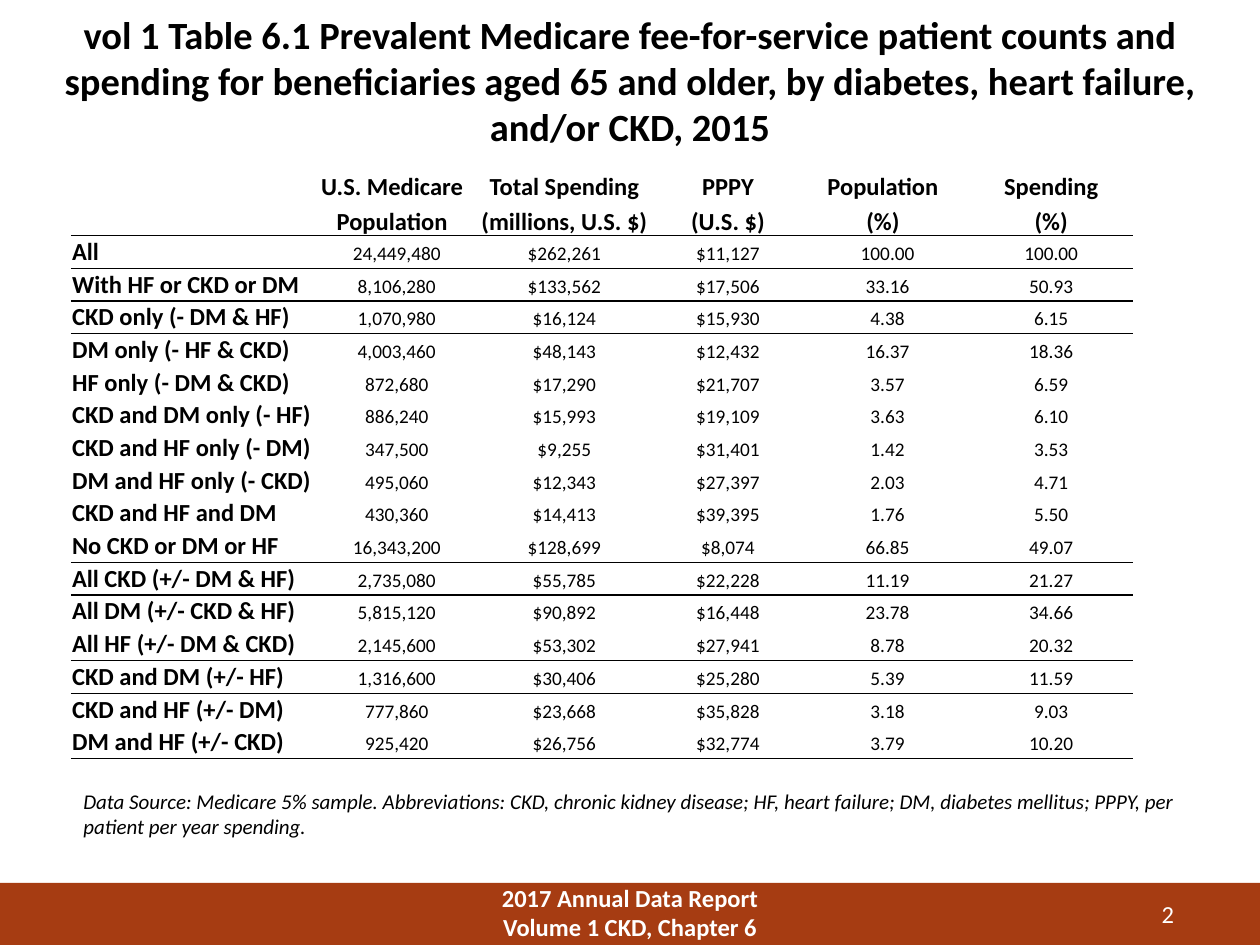
import dataclasses

import lxml.etree
import pptx
import pptx.dml.color
import pptx.enum.shapes
import pptx.enum.text
import pptx.oxml.ns
import pptx.util

Pt = pptx.util.Pt
ALIGN = pptx.enum.text.PP_ALIGN
ANCHOR = pptx.enum.text.MSO_ANCHOR


def rgb(code):
    return pptx.dml.color.RGBColor.from_string(code)


@dataclasses.dataclass(frozen=True)
class Theme:
    font: str = "Calibri"
    ink: str = "000000"
    light: str = "FFFFFF"
    band: str = "A63C12"
    title: float = 22
    label: float = 14
    note: float = 12
    value: float = 11
    rule: float = 1


THEME = Theme()
PLAIN_STYLE = "{2D5ABB26-0587-4C30-8999-92F81FD0307C}"

TITLE = ("vol 1 Table 6.1 Prevalent Medicare fee-for-service patient counts and spending "
         "for beneficiaries aged 65 and older, by diabetes, heart failure, and/or CKD, 2015")
NOTE = ("Data Source: Medicare 5% sample. Abbreviations: CKD, chronic kidney disease; "
        "HF, heart failure; DM, diabetes mellitus; PPPY, per patient per year spending.")
REPORT = ["2017 Annual Data Report", "Volume 1 CKD, Chapter 6"]

HEADINGS = ["", "U.S. Medicare Population", "Total Spending (millions, U.S. $)",
            "PPPY\v(U.S. $)", "Population\v(%)", "Spending\v(%)"]
GROUPS = [
    ("All", "24,449,480", "$262,261", "$11,127", "100.00", "100.00"),
    ("With HF or CKD or DM", "8,106,280", "$133,562", "$17,506", "33.16", "50.93"),
    ("CKD only (- DM & HF)", "1,070,980", "$16,124", "$15,930", "4.38", "6.15"),
    ("DM only (- HF & CKD)", "4,003,460", "$48,143", "$12,432", "16.37", "18.36"),
    ("HF only (- DM & CKD)", "872,680", "$17,290", "$21,707", "3.57", "6.59"),
    ("CKD and DM only (- HF)", "886,240", "$15,993", "$19,109", "3.63", "6.10"),
    ("CKD and HF only (- DM)", "347,500", "$9,255", "$31,401", "1.42", "3.53"),
    ("DM and HF only (- CKD)", "495,060", "$12,343", "$27,397", "2.03", "4.71"),
    ("CKD and HF and DM", "430,360", "$14,413", "$39,395", "1.76", "5.50"),
    ("No CKD or DM or HF", "16,343,200", "$128,699", "$8,074", "66.85", "49.07"),
    ("All CKD (+/- DM & HF)", "2,735,080", "$55,785", "$22,228", "11.19", "21.27"),
    ("All DM (+/- CKD & HF)", "5,815,120", "$90,892", "$16,448", "23.78", "34.66"),
    ("All HF (+/- DM & CKD)", "2,145,600", "$53,302", "$27,941", "8.78", "20.32"),
    ("CKD and DM (+/- HF)", "1,316,600", "$30,406", "$25,280", "5.39", "11.59"),
    ("CKD and HF (+/- DM)", "777,860", "$23,668", "$35,828", "3.18", "9.03"),
    ("DM and HF (+/- CKD)", "925,420", "$26,756", "$32,774", "3.79", "10.20"),
]
COLUMN_WIDTHS = [139.5, 93.5, 98, 89, 93.5, 93.5]
HEADING_HEIGHT, GROUP_HEIGHT = 35.3, 18.7
RULED_ROWS = {0, 1, 2, 10, 13, 16}
PADDED_COLUMNS = {1, 4}


def apply(target, values):
    for name, value in values.items():
        setattr(target, name, value)


def style(paragraph, size, color=THEME.ink, layout=None, **font):
    apply(paragraph, layout or {})
    apply(paragraph.font, {"name": THEME.font, "size": Pt(size), **font})
    paragraph.font.color.rgb = rgb(color)


def add_text(slide, box, lines, size, anchor=ANCHOR.TOP, **look):
    frame = slide.shapes.add_textbox(*map(Pt, box)).text_frame
    apply(frame, {"word_wrap": True, "vertical_anchor": anchor, "text": "\n".join(lines)})
    for paragraph in frame.paragraphs:
        style(paragraph, size, **look)


def add_band(slide, box):
    band = slide.shapes.add_shape(pptx.enum.shapes.MSO_SHAPE.RECTANGLE, *map(Pt, box))
    band.shadow.inherit = False
    band.fill.solid()
    band.fill.fore_color.rgb = rgb(THEME.band)
    band.line.fill.background()


def rule_cell(cell, edges):
    properties = cell._tc.get_or_add_tcPr()
    for position, edge in enumerate(edges):
        line = lxml.etree.Element(pptx.oxml.ns.qn(f"a:{edge}"), w=str(Pt(THEME.rule)))
        fill = lxml.etree.SubElement(line, pptx.oxml.ns.qn("a:solidFill"))
        lxml.etree.SubElement(fill, pptx.oxml.ns.qn("a:srgbClr"), val=THEME.ink)
        properties.insert(position, line)


def fill_cell(cell, text, row, column):
    is_label = column == 0
    is_heading = row == 0
    padded = is_heading and column in PADDED_COLUMNS
    apply(cell, {
        "text": text,
        "vertical_anchor": ANCHOR.MIDDLE,
        "margin_left": Pt(0.7 if is_label else 0),
        "margin_right": Pt(5.4 if padded else 0),
        "margin_top": 0,
        "margin_bottom": 0,
    })
    cell.fill.background()
    centred = {"alignment": ALIGN.CENTER, "line_spacing": 1.15, "space_after": Pt(10)}
    strong = is_label or is_heading
    style(cell.text_frame.paragraphs[0], THEME.label if strong else THEME.value,
          layout={} if is_label else centred, bold=strong)
    ruled = {"lnT": row - 1 in RULED_ROWS, "lnB": row in RULED_ROWS}
    rule_cell(cell, [edge for edge, shown in ruled.items() if shown])


def add_spending_table(slide, left, top):
    rows = [HEADINGS, *GROUPS]
    heights = [HEADING_HEIGHT] + [GROUP_HEIGHT] * len(GROUPS)
    size = (sum(COLUMN_WIDTHS), sum(heights))
    table = slide.shapes.add_table(
        len(rows), len(HEADINGS), *map(Pt, (left, top, *size))).table
    apply(table, {"first_row": False, "horz_banding": False})
    table._tbl.tblPr.find(pptx.oxml.ns.qn("a:tableStyleId")).text = PLAIN_STYLE
    for column, width in zip(table.columns, COLUMN_WIDTHS):
        column.width = Pt(width)
    for row, height in zip(table.rows, heights):
        row.height = Pt(height)
    for row, texts in enumerate(rows):
        for column, text in enumerate(texts):
            fill_cell(table.cell(row, column), text, row, column)


def main():
    deck = pptx.Presentation()
    apply(deck, {"slide_width": Pt(720), "slide_height": Pt(540)})
    slide = deck.slides.add_slide(deck.slide_layouts[6])
    centred = {"alignment": ALIGN.CENTER}
    add_band(slide, (0, 504.5, 720, 35.5))
    add_text(slide, (258, 501, 204, 39), REPORT, THEME.label,
             color=THEME.light, layout=centred, bold=True)
    add_text(slide, (606, 510, 72, 21.5), ["2"], THEME.label,
             color=THEME.light, layout={"alignment": ALIGN.RIGHT})
    add_text(slide, (0, 0.7, 720, 90), [TITLE], THEME.title, ANCHOR.MIDDLE,
             layout=centred, bold=True)
    add_spending_table(slide, 40.5, 96)
    add_text(slide, (40.5, 447, 639, 36), [NOTE], THEME.note, italic=True)
    deck.save("out.pptx")


if __name__ == "__main__":
    main()
